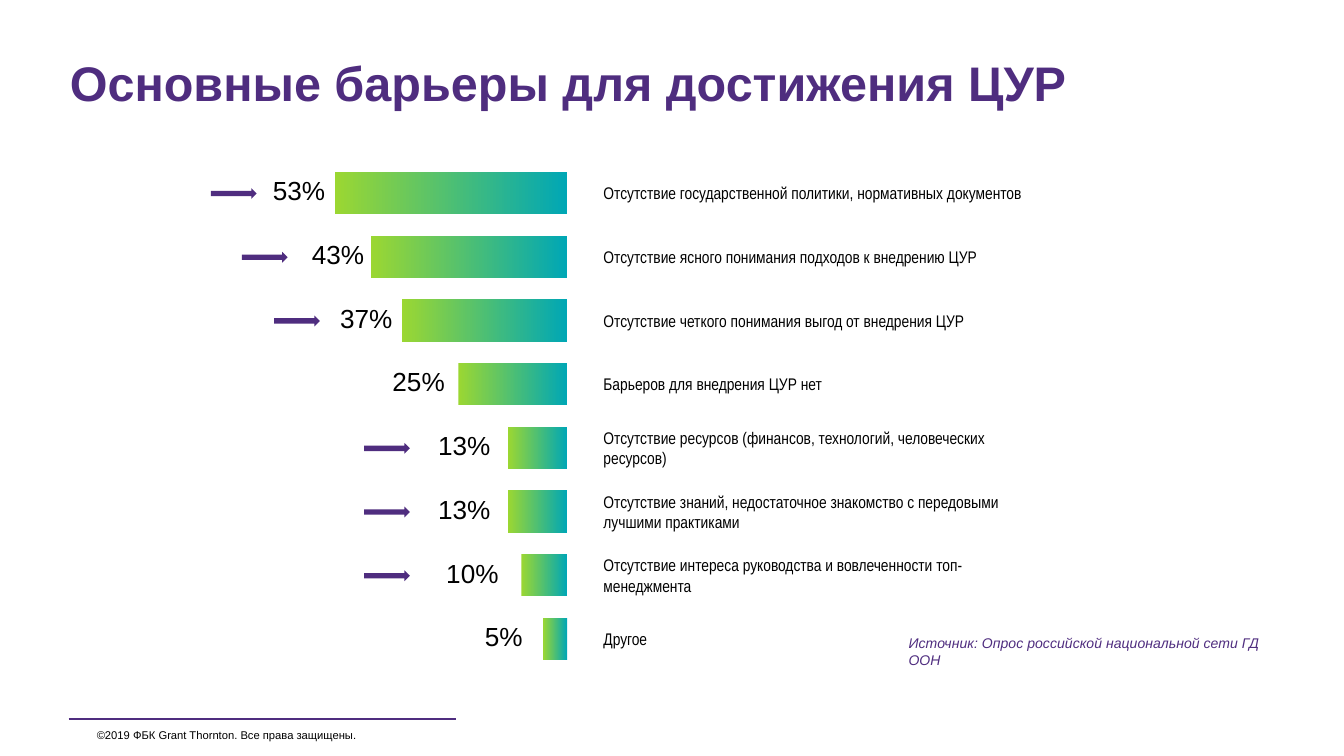
"""Build the slide on barriers to reaching the SDGs, on a grid of 100 columns."""
import pptx
import pptx.util
from lxml import etree
from pptx.dml.color import RGBColor
from pptx.enum.shapes import MSO_CONNECTOR, MSO_SHAPE
from pptx.enum.text import MSO_ANCHOR, PP_ALIGN
from pptx.oxml.ns import qn

PURPLE = RGBColor(0x4F, 0x2D, 0x7F)
GREEN = RGBColor(0x9B, 0xD7, 0x32)
TEAL = RGBColor(0x00, 0xA7, 0xB5)
BLACK = RGBColor(0, 0, 0)

# Share in percent, bar width, gap to the bar, arrow offset, label
ROWS = [
    (53, 17.3, 0.7, 0, "Отсутствие государственной политики, нормативных документов"),
    (43, 14.6, 0.5, 2.3, "Отсутствие ясного понимания подходов к внедрению ЦУР"),
    (37, 12.3, 0.7, 4.7, "Отсутствие четкого понимания выгод от внедрения ЦУР"),
    (25, 8.1, 1, None, "Барьеров для внедрения ЦУР нет"),
    (13, 4.4, 1.3, 11.4, "Отсутствие ресурсов (финансов, технологий, человеческих ресурсов)"),
    (13, 4.4, 1.3, 11.4, "Отсутствие знаний, недостаточное знакомство с передовыми лучшими практиками"),
    (10, 3.4, 1.7, 11.4, "Отсутствие интереса руководства и вовлеченности топ-менеджмента"),
    (5, 1.8, 1.5, None, "Другое"),
]


def grid(*cells):
    """Turn grid cells into slide lengths."""
    return [pptx.util.Inches(cell / 10) for cell in cells]


def text(slide, box, words, size, color=BLACK, face="Arial", bold=False,
         slant=False, align=PP_ALIGN.LEFT, anchor=MSO_ANCHOR.TOP):
    """Add a text box without margins."""
    frame = slide.shapes.add_textbox(*grid(*box)).text_frame
    frame.word_wrap = True
    frame.vertical_anchor = anchor
    frame.margin_left = frame.margin_right = 0
    frame.margin_top = frame.margin_bottom = 0
    line = frame.paragraphs[0]
    line.text = words
    line.alignment = align
    font = line.font
    font.name, font.size = face, pptx.util.Pt(size)
    font.bold, font.italic = bold, slant
    font.color.rgb = color


def shape(slide, kind, box):
    """Add a preset shape with no line or shadow."""
    item = slide.shapes.add_shape(kind, *grid(*box))
    item.shadow.inherit = False
    item.line.fill.background()
    return item


def arrow(slide, box):
    """Add a purple arrow."""
    fill = shape(slide, MSO_SHAPE.RIGHT_ARROW, box).fill
    fill.solid()
    fill.fore_color.rgb = PURPLE


def bar(slide, box):
    """Add a bar that fades from green to teal."""
    fill = shape(slide, MSO_SHAPE.RECTANGLE, box).fill
    fill.gradient()
    fill.gradient_angle = 0
    for stop, place, color in zip(fill.gradient_stops, (0, 1), (GREEN, TEAL)):
        stop.position = place
        stop.color.rgb = color


def bars(slide, box):
    """Draw one row per barrier: arrow, share, bar and label."""
    left, top, width, height = box
    step = height / len(ROWS)
    deep = 3.15
    base = left + 26.5
    name = left + 29.2
    for index, (share, size, gap, shift, label) in enumerate(ROWS):
        y = top + index * step
        if shift is not None:
            arrow(slide, (left + shift, y + 1.2, 3.4, 0.8))
        bar(slide, (base - size, y, size, deep))
        text(slide, (base - size - gap - 7.8, y + 0.2, 7.8, 2.4), f"{share}%",
             14, align=PP_ALIGN.RIGHT)
        text(slide, (name, y, left + width - name, deep), label, 9,
             face="Arial Narrow", anchor=MSO_ANCHOR.MIDDLE)


def footer(slide, box):
    """Draw the rule and the copyright line."""
    left, top, width, height = box
    rule = slide.shapes.add_connector(
        MSO_CONNECTOR.STRAIGHT, *grid(left, top, left + width, top))
    rule.line.color.rgb = PURPLE
    rule.line.width = pptx.util.Pt(1.5)
    etree.SubElement(rule._element.spPr, qn("a:effectLst"))
    text(slide, (left + 2.1, top + 0.2, width, height - 0.1),
         "©2019 ФБК Grant Thornton. Все права защищены.", 6,
         anchor=MSO_ANCHOR.MIDDLE)


def main():
    """Build and save the slide."""
    deck = pptx.Presentation()
    deck.slide_width, deck.slide_height = grid(100, 56.25)
    slide = deck.slides.add_slide(deck.slide_layouts[6])
    footer(slide, (5.1, 53.5, 28.8, 2.1))
    text(slide, (5.2, 3.95, 89.7, 9.2), "Основные барьеры для достижения ЦУР",
         26, PURPLE, bold=True)
    text(slide, (67.6, 47.2, 28.5, 2.6),
         "Источник: Опрос российской национальной сети ГД ООН", 7.5, PURPLE,
         slant=True)
    bars(slide, (15.7, 12.8, 62.1, 37.92))
    deck.save("out.pptx")


if __name__ == "__main__":
    main()
